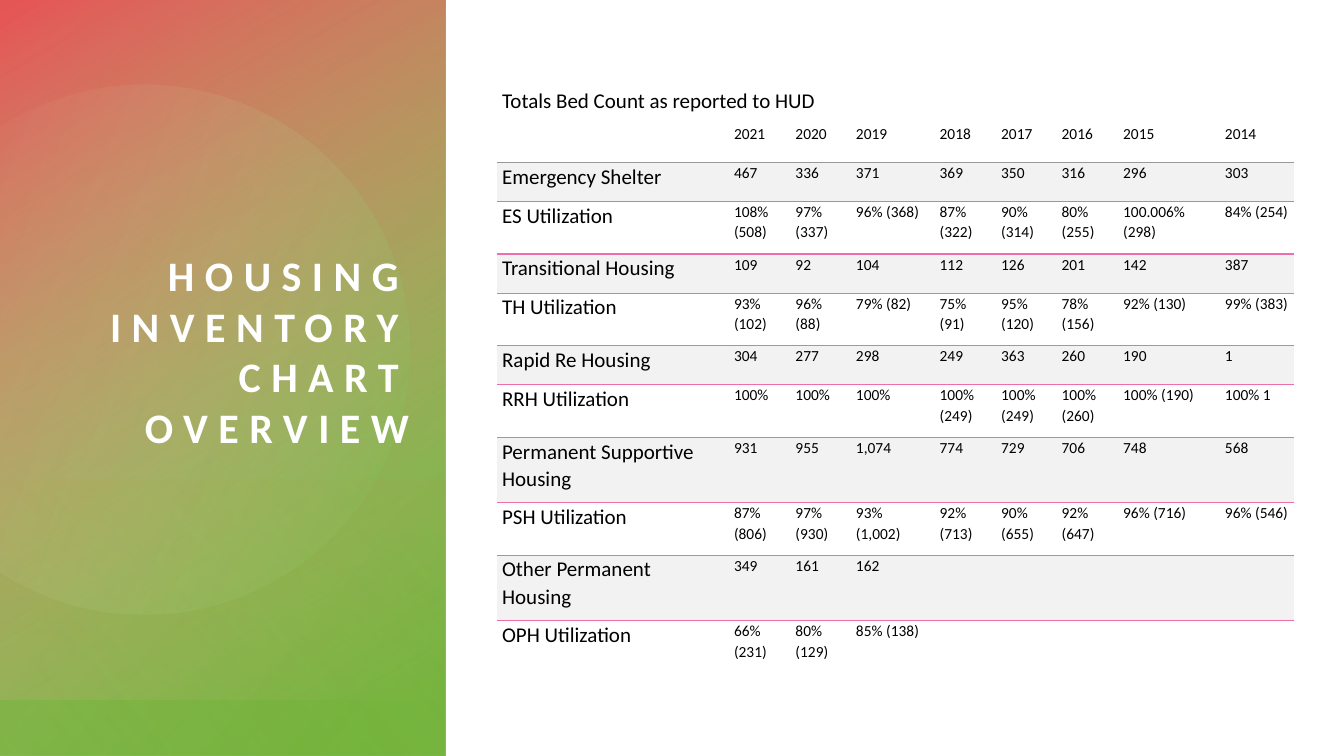
from math import acos, cos, degrees, radians, sin

from lxml.etree import SubElement
from pptx import Presentation
from pptx.dml.color import RGBColor
from pptx.enum.shapes import MSO_SHAPE
from pptx.enum.text import MSO_ANCHOR, PP_ALIGN
from pptx.oxml import parse_xml
from pptx.oxml.ns import nsdecls, qn
from pptx.util import Inches, Pt

WIDTH, HEIGHT = 13.33, 7.5
PANEL = 4.42  # width of the coloured panel
FONT = "Calibri"
PINK, GREY, BAND = "EE6EAA", "999999", "F2F2F2"
NO_STYLE = "{2D5ABB26-0587-4C30-8999-92F81FD0307C}"

COLUMNS = [2.3, 0.61, 0.6, 0.83, 0.61, 0.6, 0.61, 1.01, 0.73]
PLAIN_ROW, TALL_ROW, WRAPPED_ROW = 0.39, 0.52, 0.65
CAPTION = "Totals Bed Count as reported to HUD"
YEARS = ["2021", "2020", "2019", "2018", "2017", "2016", "2015", "2014"]
# Each programme has a row of bed counts and a row of utilization
PROGRAMMES = [
    ("Emergency Shelter", PLAIN_ROW,
     ["467", "336", "371", "369", "350", "316", "296", "303"],
     "ES Utilization",
     ["108% (508)", "97% (337)", "96% (368)", "87% (322)", "90% (314)",
      "80% (255)", "100.006% (298)", "84% (254)"]),
    ("Transitional Housing", PLAIN_ROW,
     ["109", "92", "104", "112", "126", "201", "142", "387"],
     "TH Utilization",
     ["93% (102)", "96% (88)", "79% (82)", "75% (91)", "95% (120)",
      "78% (156)", "92% (130)", "99% (383)"]),
    ("Rapid Re Housing", PLAIN_ROW,
     ["304", "277", "298", "249", "363", "260", "190", "1"],
     "RRH Utilization",
     ["100%", "100%", "100%", "100% (249)", "100% (249)",
      "100% (260)", "100% (190)", "100% 1"]),
    ("Permanent Supportive Housing", WRAPPED_ROW,
     ["931", "955", "1,074", "774", "729", "706", "748", "568"],
     "PSH Utilization",
     ["87% (806)", "97%\n(930)", "93% (1,002)", "92% (713)", "90% (655)",
      "92% (647)", "96% (716)", "96% (546)"]),
    ("Other Permanent Housing", WRAPPED_ROW,
     ["349", "161", "162"] + [""] * 5,
     "OPH Utilization",
     ["66% (231)", "80% (129)", "85% (138)"] + [""] * 5),
]


def color(value):
    return RGBColor.from_string(value)


def paint_gradient(shape, stops, angle):
    """Fill with (position %, colour, opacity %) stops along an angle."""
    shape.shadow.inherit = False
    shape.line.fill.background()
    marks = "".join(
        f'<a:gs pos="{place * 1000}"><a:srgbClr val="{value}">'
        f'<a:alpha val="{opacity * 1000}"/></a:srgbClr></a:gs>'
        for place, value, opacity in stops)
    fill = parse_xml(
        f'<a:gradFill {nsdecls("a")} rotWithShape="1"><a:gsLst>{marks}</a:gsLst>'
        f'<a:lin ang="{angle * 60000}" scaled="0"/></a:gradFill>')
    properties = shape._element.spPr
    properties.find(qn("a:ln")).addprevious(fill)


def add_panel_layer(page, top, bottom, stops, angle):
    """A mirrored rectangle turned by a quarter, as wide as the panel."""
    length, middle = bottom - top, (top + bottom) / 2
    box = page.shapes.add_shape(
        MSO_SHAPE.RECTANGLE, Inches((PANEL - length) / 2),
        Inches(middle - PANEL / 2), Inches(length), Inches(PANEL))
    box.rotation = 90
    box._element.spPr.find(qn("a:xfrm")).set("flipH", "1")
    paint_gradient(box, stops, angle)


def add_cut_circle(page):
    """A turned circle whose chord lies on the left edge of the slide."""
    left, top, radius, turn, steps = -0.82, 1.31, 2.63, 101.6, 120
    half = degrees(acos(1.43 / radius))
    start, sweep = 180 - turn + half, 360 - 2 * half
    angles = [radians(start + sweep * step / steps) for step in range(steps + 1)]
    points = [(Inches(left + radius * (1 + cos(angle))),
               Inches(top + radius * (1 + sin(angle)))) for angle in angles]
    builder = page.shapes.build_freeform(*points[0])
    builder.add_line_segments(points[1:], close=True)
    circle = builder.convert_to_shape()
    circle.rotation = turn
    paint_gradient(circle, [(13, "F3EDD7", 2), (100, "6BB73C", 29)], 280)


def format_text(frame, size, value, bold=False):
    for para in frame.paragraphs:
        for span in para.runs:
            span.font.name = FONT
            span.font.size = Pt(size)
            span.font.bold = bold
            span.font.color.rgb = color(value)


def add_title(page, text):
    box = page.shapes.add_textbox(
        Inches(0.52), Inches(HEIGHT / 10), Inches(3.54), Inches(3.73))
    frame = box.text_frame
    frame.word_wrap = True
    frame.vertical_anchor = MSO_ANCHOR.BOTTOM
    frame.margin_left = frame.margin_right = 0
    frame.margin_top = frame.margin_bottom = 0
    frame.text = text
    para = frame.paragraphs[0]
    para.alignment = PP_ALIGN.RIGHT
    format_text(frame, 30, "FFFFFF", bold=True)
    para.runs[0].font._element.set("spc", "750")


def fill_cell(cell, text, size, band):
    cell.margin_left = cell.margin_right = Inches(0.05)
    cell.margin_top, cell.margin_bottom = 0, Inches(0.09)
    cell.text_frame.text = text
    format_text(cell.text_frame, size, "000000")
    for para in cell.text_frame.paragraphs:
        para.line_spacing = 1.07
        if not text:
            SubElement(para._p, qn("a:endParaRPr"), sz=str(size * 100))
    if band:
        cell.fill.solid()
        cell.fill.fore_color.rgb = color(BAND)
    else:
        cell.fill.background()


def rule_above(cell, value):
    line = parse_xml(
        f'<a:lnT {nsdecls("a")} w="12700"><a:solidFill><a:srgbClr val="{value}"/>'
        f'</a:solidFill></a:lnT>')
    cell._tc.get_or_add_tcPr().insert(0, line)


def add_bed_table(page):
    rows = [(PLAIN_ROW, [CAPTION] + [""] * len(YEARS)),
            (PLAIN_ROW, [""] + YEARS)]
    for name, height, beds, usage, rates in PROGRAMMES:
        rows += [(height, [name] + beds), (TALL_ROW, [usage] + rates)]
    table_height = sum(height for height, _ in rows)
    holder = page.shapes.add_table(
        len(rows), len(COLUMNS), Inches(4.93), Inches(0.83),
        Inches(sum(COLUMNS)), Inches(table_height))
    table = holder.table
    table.first_row = table.horz_banding = False
    table._tbl.tblPr.find(qn("a:tableStyleId")).text = NO_STYLE
    for column, width in zip(table.columns, COLUMNS):
        column.width = Inches(width)

    for row, (height, texts) in enumerate(rows):
        table.rows[row].height = Inches(height)
        band = row >= 2 and row % 2 == 0
        for column, text in enumerate(texts):
            cell = table.cell(row, column)
            fill_cell(cell, text, 11 if column else 15, band)
            if band:
                rule_above(cell, GREY if row == 2 else PINK)

    # Caption across the full width
    caption = table.cell(0, 0)
    caption.merge(table.cell(0, len(COLUMNS) - 1))
    caption.vertical_anchor = MSO_ANCHOR.BOTTOM


def main():
    deck = Presentation()
    deck.slide_width, deck.slide_height = Inches(WIDTH), Inches(HEIGHT)
    page = deck.slides.add_slide(deck.slide_layouts[6])

    # Coloured panel
    add_panel_layer(page, 0, HEIGHT, [(8, "6BB73C", 100), (100, "98AB4F", 89)], 50)
    add_panel_layer(page, 0, 6.94, [(0, "C2CE94", 0), (99, "EB4E56", 92)], 30)
    add_panel_layer(page, 4.76, HEIGHT, [(2, "98AB4F", 28), (100, "BFA239", 0)], 130)
    add_cut_circle(page)

    # Content
    add_title(page, "HOUSING INVENTORY CHART OVERVIEW")
    add_bed_table(page)
    deck.save("out.pptx")


if __name__ == "__main__":
    main()
